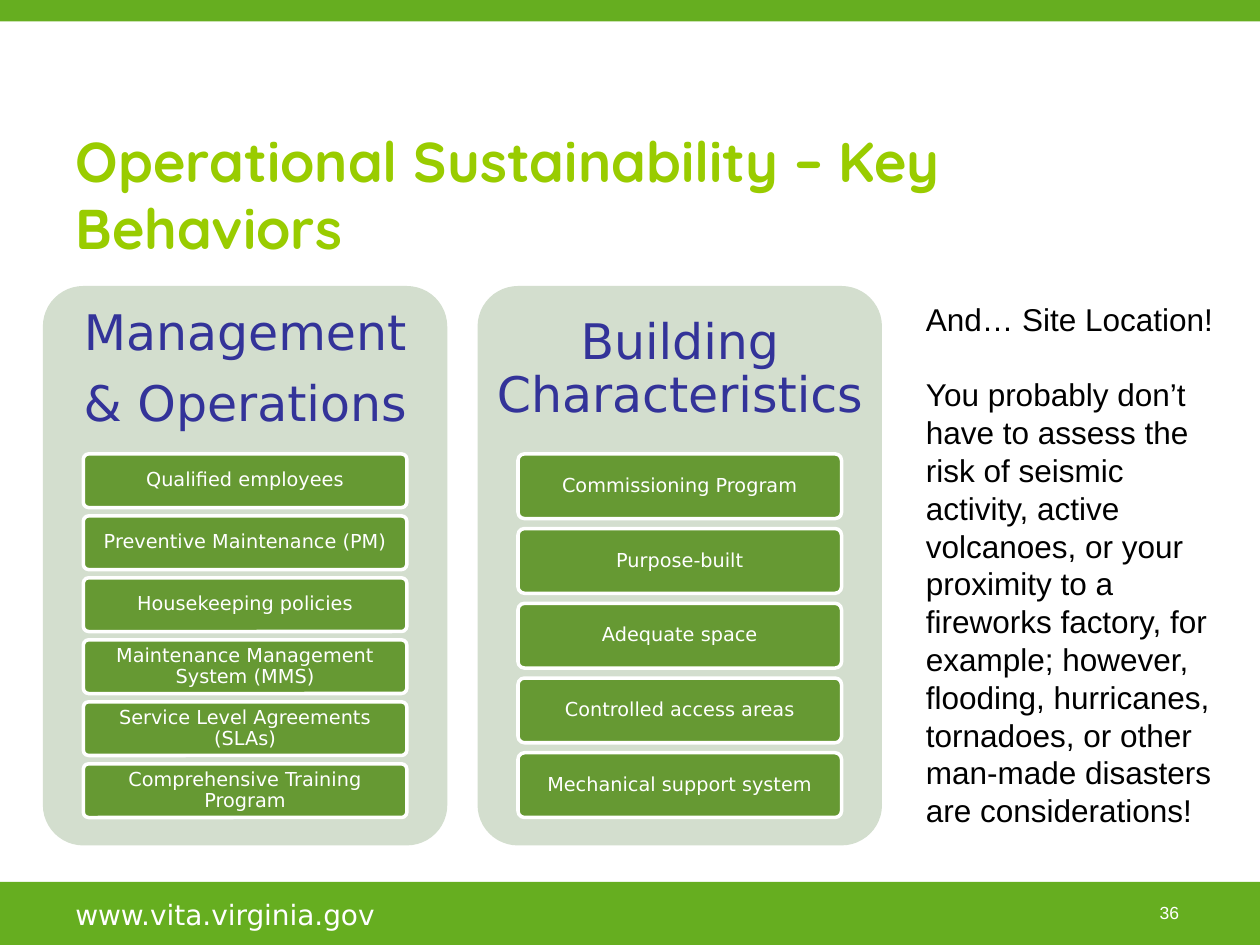
"""Build the slide on key behaviors of operational sustainability."""
import pptx
import pptx.dml.color
import pptx.enum.shapes
import pptx.enum.text
import pptx.util

Inches, Pt = pptx.util.Inches, pptx.util.Pt
SHAPES = pptx.enum.shapes.MSO_SHAPE
ALIGN = pptx.enum.text.PP_ALIGN
ANCHOR = pptx.enum.text.MSO_ANCHOR


def block(kind, left, top, width, height, fill):
    shape = slide.shapes.add_shape(kind, Inches(left), Inches(top), Inches(width), Inches(height))
    shape.shadow.inherit = False
    shape.fill.solid()
    shape.fill.fore_color.rgb = pptx.dml.color.RGBColor.from_string(fill)
    shape.line.fill.background()
    if kind == SHAPES.ROUNDED_RECTANGLE:
        shape.adjustments[0] = 0.1
    return shape


def write(shape, lines, size, font, color, align=ALIGN.LEFT, anchor=ANCHOR.TOP,
          insets=(0.1, 0.05), spacing=None, gap=0, wrap=True):
    frame = shape.text_frame
    frame.word_wrap = wrap
    frame.vertical_anchor = anchor
    frame.margin_left = frame.margin_right = Inches(insets[0])
    frame.margin_top = frame.margin_bottom = Inches(insets[1])
    frame.text = "\n".join(lines)
    for index, paragraph in enumerate(frame.paragraphs):
        paragraph.alignment = align
        paragraph.line_spacing = spacing
        paragraph.space_before = Pt(gap if index else 0)
        paragraph.font.size = Pt(size)
        paragraph.font.name = font
        paragraph.font.color.rgb = pptx.dml.color.RGBColor.from_string(color)


deck = pptx.Presentation()
deck.slide_width, deck.slide_height = Inches(10), Inches(7.5)
slide = deck.slides.add_slide(deck.slide_layouts[5])

block(SHAPES.RECTANGLE, 0, 7, 10, 0.5, "66AE20")
block(SHAPES.RECTANGLE, 0, 0, 10, 0.17, "66AE20")

title = slide.shapes.title
title.left, title.top, title.width, title.height = map(Inches, (0.5, 1.08, 9.23, 0.92))
write(title, ["Operational Sustainability – Key Behaviors"], 32, "Quicksand", "99CC00",
      anchor=ANCHOR.MIDDLE, spacing=Pt(38.3))
title.text_frame.paragraphs[0].font.bold = True

page_number = slide.shapes.add_textbox(Inches(9.17), Inches(7.15), Inches(0.22), Inches(0.19))
write(page_number, ["36"], 10, "Arial", "FFFFFF", ALIGN.CENTER, ANCHOR.MIDDLE, (0, 0), wrap=False)

website = slide.shapes.add_textbox(Inches(0.5), Inches(7.07), Inches(2.67), Inches(0.35))
write(website, ["www.vita.virginia.gov"], 16, "DejaVu Sans", "FFFFFF")

behaviors = [
    (["Management", "& Operations"],
     ["Qualified employees", "Preventive Maintenance (PM)", "Housekeeping policies",
      "Maintenance Management System (MMS)", "Service Level Agreements (SLAs)",
      "Comprehensive Training Program"]),
    (["Building Characteristics"],
     ["Commissioning Program", "Purpose-built", "Adequate space",
      "Controlled access areas", "Mechanical support system"]),
]
panel_top, panel_width, panel_height = 2.27, 3.21, 4.44
heading_height = 0.3 * panel_height
item_width, items_height = 0.8 * panel_width, 0.65 * panel_height
gap_share = 0.154

for column, (heading, items) in enumerate(behaviors):
    left = 0.34 + 3.45 * column
    block(SHAPES.ROUNDED_RECTANGLE, left, panel_top, panel_width, panel_height, "D3DECE")
    heading_box = slide.shapes.add_textbox(
        Inches(left), Inches(panel_top), Inches(panel_width), Inches(heading_height))
    write(heading_box, heading, 28, "DejaVu Sans", "333399", ALIGN.CENTER, ANCHOR.MIDDLE,
          (0.12, 0.12), 0.9, 10)

    item_height = items_height / (len(items) + (len(items) - 1) * gap_share)
    for row, item in enumerate(items):
        item_top = panel_top + heading_height + row * item_height * (1 + gap_share)
        item_box = block(SHAPES.ROUNDED_RECTANGLE, left + 0.1 * panel_width, item_top,
                         item_width, item_height, "669933")
        item_box.line.color.rgb = pptx.dml.color.RGBColor.from_string("FFFFFF")
        item_box.line.width = Pt(2)
        write(item_box, [item], 11, "DejaVu Sans", "FFFFFF", ALIGN.CENTER, ANCHOR.MIDDLE,
              (0.03, 0.02), 0.9)

site_location = slide.shapes.add_textbox(Inches(7.25), Inches(2.33), Inches(2.58), Inches(4.95))
write(site_location, [
    "And… Site Location!",
    "You probably don’t have to assess the risk of seismic activity, active volcanoes, "
    "or your proximity to a fireworks factory, for example; however, flooding, hurricanes, "
    "tornadoes, or other man-made disasters are considerations!",
], 18, "Arial", "000000", spacing=Pt(21.6), gap=21.6)

deck.save("out.pptx")
